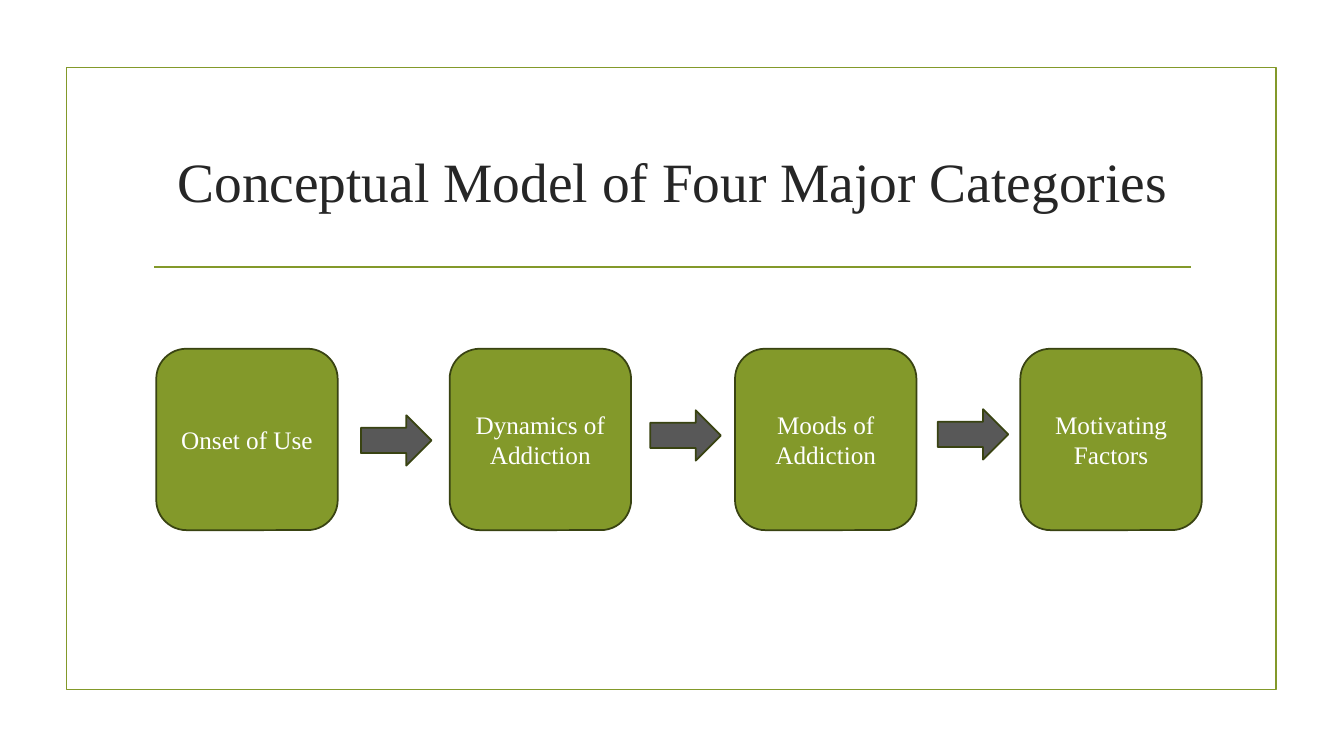
from lxml.etree import SubElement
from pptx import Presentation
from pptx.dml.color import RGBColor
from pptx.enum.shapes import MSO_CONNECTOR as Connector, MSO_SHAPE as Shape
from pptx.enum.text import MSO_ANCHOR as Anchor, PP_ALIGN as Align
from pptx.oxml.ns import qn
from pptx.util import Emu, Pt

# Scale: 100 px to the inch
EMU_PER_PX = 9144
LINE_WIDTH = Pt(1.25)
FONT_NAME = "Times New Roman"

# Colours
GREEN = RGBColor(0x83, 0x99, 0x2A)
DARK_GREEN = RGBColor(0x39, 0x43, 0x12)
GREY = RGBColor(0x58, 0x58, 0x58)
INK = RGBColor(0x26, 0x26, 0x26)
WHITE = RGBColor(0xFF, 0xFF, 0xFF)

# Flow of categories: left edge and label; arrows: left and top edge
CATEGORY_TOP, CATEGORY_SIZE = 346, 180
CATEGORIES = [
    (155, "Onset of Use"),
    (446, "Dynamics of Addiction"),
    (729, "Moods of Addiction"),
    (1012, "Motivating Factors"),
]
ARROWS = [(358, 412), (645, 407), (930, 406)]


def px(*lengths):
    return [Emu(length * EMU_PER_PX) for length in lengths]


def write_text(box, text, size, color):
    frame = box.text_frame
    for name, value in {"word_wrap": True, "vertical_anchor": Anchor.MIDDLE}.items():
        setattr(frame, name, value)
    para = frame.paragraphs[0]
    para.alignment = Align.CENTER
    span = para.add_run()
    span.text = text
    for name, value in {"name": FONT_NAME, "size": Pt(size)}.items():
        setattr(span.font, name, value)
    span.font.color.rgb = color


def add_outlined(page, kind, bounds, line_color, fill_color=None):
    shape = page.shapes.add_shape(kind, *px(*bounds))
    shape.shadow.inherit = False
    if fill_color is None:
        shape.fill.background()
    else:
        shape.fill.solid()
        shape.fill.fore_color.rgb = fill_color
    shape.line.color.rgb = line_color
    shape.line.width = LINE_WIDTH
    return shape


def add_rule(page, left, right, top):
    rule = page.shapes.add_connector(Connector.STRAIGHT, *px(left, top, right, top))
    rule.line.color.rgb = GREEN
    rule.line.width = LINE_WIDTH
    SubElement(rule.element.spPr, qn("a:effectLst"))


def add_title(page, text):
    box = page.shapes.add_textbox(*px(142, 107, 1050, 143))
    write_text(box, text, 39.6, INK)


def add_category(page, left, label):
    bounds = (left, CATEGORY_TOP, CATEGORY_SIZE, CATEGORY_SIZE)
    box = add_outlined(page, Shape.ROUNDED_RECTANGLE, bounds, DARK_GREEN, GREEN)
    write_text(box, label, 18, WHITE)


def add_arrow(page, left, top):
    add_outlined(page, Shape.RIGHT_ARROW, (left, top, 70, 50), DARK_GREEN, GREY)


def main():
    deck = Presentation()
    deck.slide_width, deck.slide_height = px(1333, 750)
    page = deck.slides.add_slide(deck.slide_layouts[6])

    # Frame and heading
    add_outlined(page, Shape.RECTANGLE, (66, 67, 1200, 617), GREEN)
    add_rule(page, 153, 1181, 265)
    add_title(page, "Conceptual Model of Four Major Categories")

    # Flow of categories
    for left, label in CATEGORIES:
        add_category(page, left, label)
    for left, top in ARROWS:
        add_arrow(page, left, top)

    deck.save("out.pptx")


if __name__ == "__main__":
    main()
